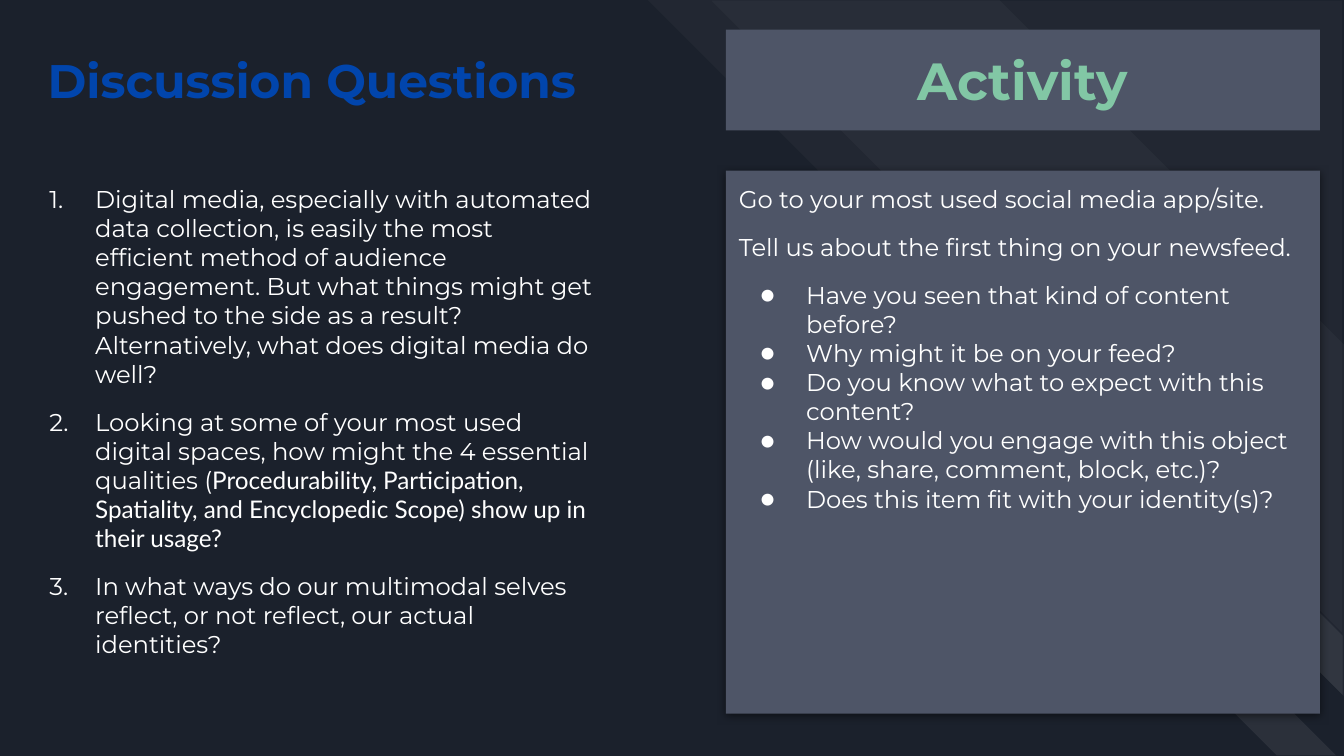
from lxml import etree
from pptx import Presentation
from pptx.dml.color import RGBColor
from pptx.enum import shapes, text
from pptx.oxml.ns import qn
from pptx.util import Inches, Pt

NAVY = RGBColor(0x1B, 0x21, 0x2C)
SLATE = RGBColor(0x4E, 0x55, 0x67)
BLUE = RGBColor(0x01, 0x45, 0xAC)
GREEN = RGBColor(0x82, 0xC7, 0xA5)
WHITE = RGBColor(0xFF, 0xFF, 0xFF)
BLACK = RGBColor(0, 0, 0)

HEADING_FONT = "Montserrat"
SECOND_FONT = "Lato"
NUMBER, DOT = "number", "dot"

SLIDE_WIDTH = 10
SLIDE_HEIGHT = SLIDE_WIDTH * 9 / 16
LEFT_X, RIGHT_X, COLUMN_WIDTH = 0.11, 5.4, 4.42
HEADING_BOX = (0.22, 0.75)  # top, height
BODY_BOX = (1.27, 4.04)

# left, top, width, height, rotation, mirrored, adjustment, opacity %
STRIPES = [
    (4.82, 0, 5.18, 5.18, 90, False, 0.495, 3),
    (5.29, 0.01, 4.7, 4.69, 90, False, 0, 3),
    (9.11, 4.29, 0.88, 0.88, 0, True, 0.5, 7),
    (9.06, 4.74, 0.88, 0.88, 270, False, 0.5, 7),
]

# Each paragraph: runs of (text, font), bullet, space before, space after
QUESTIONS = [
    ([("Digital media, especially with automated data collection, is easily the most "
       "efficient method of audience engagement. But what things might get pushed to "
       "the side as a result? Alternatively, what does digital media do well?",
       HEADING_FONT)], NUMBER, 10, 0),
    ([("Looking at some of your most used digital spaces, how might the 4 essential "
       "qualities (", HEADING_FONT),
      ("Procedurability, Participation, Spatiality, and Encyclopedic Scope) show up in "
       "their usage?", SECOND_FONT)], NUMBER, 10, 0),
    ([("In what ways do our multimodal selves reflect, or not reflect, our actual "
       "identities?", HEADING_FONT)], NUMBER, 10, 10),
]
INSTRUCTIONS = [
    "Go to your most used social media app/site.",
    "Tell us about the first thing on your newsfeed.",
]
PROMPTS = [
    "Have you seen that kind of content before?",
    "Why might it be on your feed?",
    "Do you know what to expect with this content?",
    "How would you engage with this object (like, share, comment, block, etc.)?",
    "Does this item fit with your identity(s)?",
]
ACTIVITY = [([(line, HEADING_FONT)], None, 10, 0) for line in INSTRUCTIONS]
ACTIVITY += [([(line, HEADING_FONT)], DOT, 0 if index else 10, 0)
             for index, line in enumerate(PROMPTS)]


def box(left, rows):
    top, height = rows
    return [Inches(value) for value in (left, top, COLUMN_WIDTH, height)]


def add_color(parent, color, opacity):
    element = etree.SubElement(parent, qn("a:srgbClr"), val=str(color))
    if opacity < 100:
        etree.SubElement(element, qn("a:alpha"), val=str(opacity * 1000))


def add_stripe(slide, left, top, width, height, rotation, mirrored, adjustment, opacity):
    stripe = slide.shapes.add_shape(
        shapes.MSO_SHAPE.DIAGONAL_STRIPE,
        *[Inches(value) for value in (left, top, width, height)])
    stripe.adjustments[0] = adjustment
    stripe.rotation = rotation
    stripe.shadow.inherit = False
    stripe.line.fill.background()
    stripe.fill.solid()
    stripe.fill.fore_color.rgb = WHITE
    fill = stripe._element.spPr.find(qn("a:solidFill"))
    fill.clear()
    add_color(fill, WHITE, opacity)
    if mirrored:
        stripe._element.spPr.find(qn("a:xfrm")).set("flipH", "1")


def add_panel(slide, rows):
    panel = slide.shapes.add_shape(shapes.MSO_SHAPE.RECTANGLE, *box(RIGHT_X, rows))
    panel.fill.solid()
    panel.fill.fore_color.rgb = SLATE
    panel.line.fill.background()
    panel.shadow.inherit = False
    return panel


def add_drop_shadow(shape):
    effects = shape._element.spPr.find(qn("a:effectLst"))
    shadow = etree.SubElement(effects, qn("a:outerShdw"), blurRad=str(Pt(4.5)),
                              dist=str(Pt(1.5)), dir="5400000", algn="bl", rotWithShape="0")
    add_color(shadow, BLACK, 50)


def add_bullet(paragraph, bullet):
    properties = paragraph._p.get_or_add_pPr()
    properties.set("marL", str(Inches(0.5)))
    properties.set("indent", str(Inches(-0.34)))
    add_color(etree.SubElement(properties, qn("a:buClr")), WHITE, 100)
    font_name = HEADING_FONT if bullet == NUMBER else SECOND_FONT
    etree.SubElement(properties, qn("a:buFont"), typeface=font_name)
    if bullet == NUMBER:
        etree.SubElement(properties, qn("a:buAutoNum"), type="arabicPeriod")
    else:
        etree.SubElement(properties, qn("a:buChar"), char="●")


def write(shape, paragraphs, size, color, bold=False,
          align=text.PP_ALIGN.LEFT, anchor=text.MSO_ANCHOR.TOP):
    frame = shape.text_frame
    frame_format = {"word_wrap": True, "auto_size": text.MSO_AUTO_SIZE.NONE,
                    "vertical_anchor": anchor}
    for side in ("left", "top", "right", "bottom"):
        frame_format[f"margin_{side}"] = Inches(0.1)
    for name, value in frame_format.items():
        setattr(frame, name, value)
    for index, (runs, bullet, before, after) in enumerate(paragraphs):
        paragraph = frame.add_paragraph() if index else frame.paragraphs[0]
        paragraph.alignment = align
        paragraph.space_before, paragraph.space_after = Pt(before), Pt(after)
        if bullet:
            add_bullet(paragraph, bullet)
        for words, font_name in runs:
            run = paragraph.add_run()
            run.text = words
            for name, value in {"name": font_name, "size": Pt(size), "bold": bold}.items():
                setattr(run.font, name, value)
            run.font.color.rgb = color


def write_heading(shape, words, size, color):
    write(shape, [([(words, HEADING_FONT)], None, 0, 0)], size, color, bold=True,
          align=text.PP_ALIGN.CENTER, anchor=text.MSO_ANCHOR.MIDDLE)


def main():
    presentation = Presentation()
    presentation.slide_width = Inches(SLIDE_WIDTH)
    presentation.slide_height = Inches(SLIDE_HEIGHT)
    slide = presentation.slides.add_slide(presentation.slide_layouts[5])
    slide.background.fill.solid()
    slide.background.fill.fore_color.rgb = NAVY

    for stripe in STRIPES:
        add_stripe(slide, *stripe)

    title = slide.shapes.title
    title.left, title.top, title.width, title.height = box(LEFT_X, HEADING_BOX)
    write_heading(title, "Discussion Questions", 25.2, BLUE)
    write(slide.shapes.add_textbox(*box(LEFT_X, BODY_BOX)), QUESTIONS, 13, WHITE)

    write_heading(add_panel(slide, HEADING_BOX), "Activity", 28, GREEN)
    activity_panel = add_panel(slide, BODY_BOX)
    add_drop_shadow(activity_panel)
    write(activity_panel, ACTIVITY, 13, WHITE)

    presentation.save("out.pptx")


if __name__ == "__main__":
    main()
